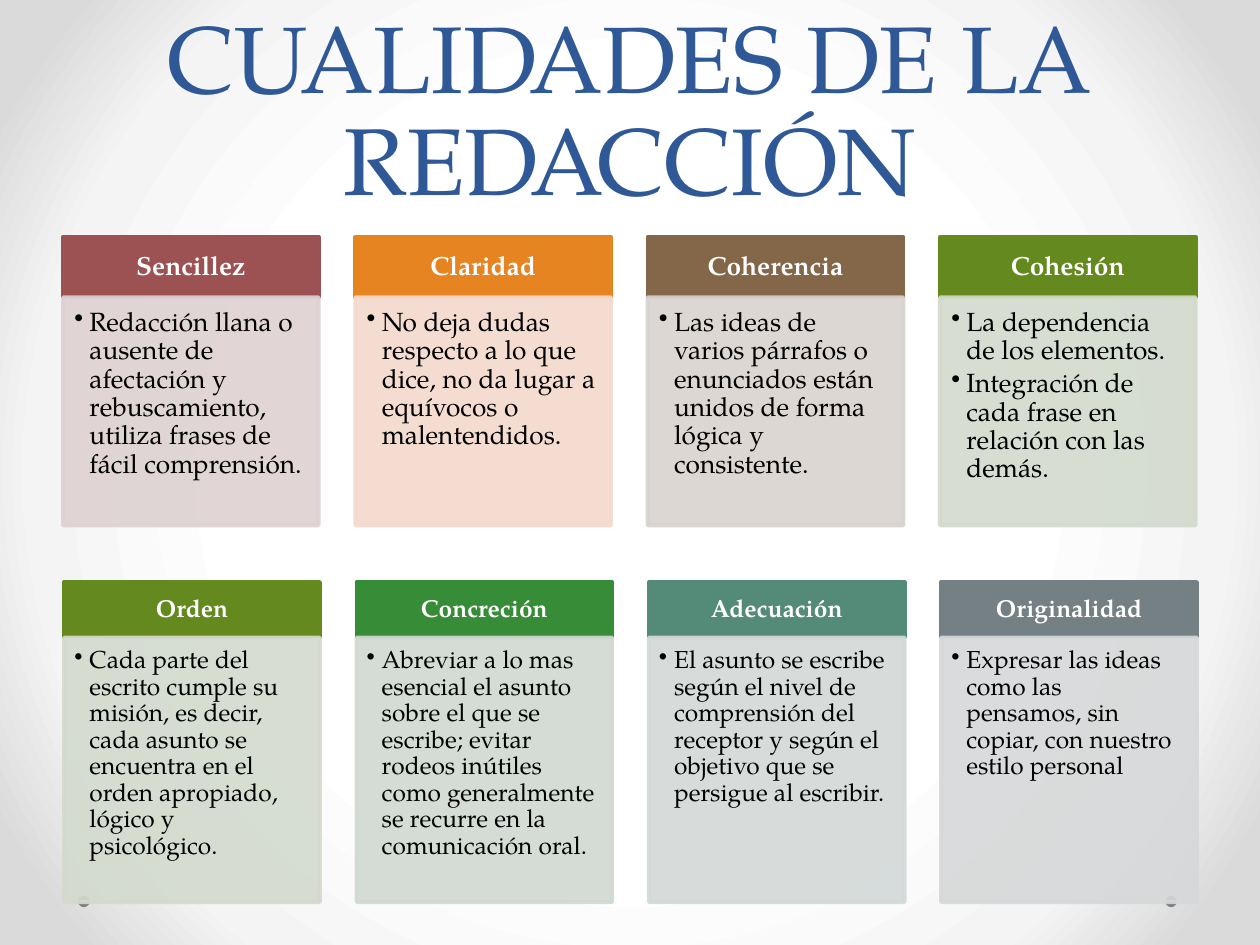
import pptx
import pptx.util
import pptx.oxml
import pptx.oxml.ns
import pptx.dml.color
import pptx.enum.shapes
import pptx.enum.text
from lxml import etree

Inches, Pt, qn = pptx.util.Inches, pptx.util.Pt, pptx.oxml.ns.qn
ALIGN, ANCHOR = pptx.enum.text.PP_ALIGN, pptx.enum.text.MSO_ANCHOR
SHAPE = pptx.enum.shapes.MSO_SHAPE

FONT = "TeX Gyre Pagella"
COLORS = {"title": "2F5897", "heading": "FFFFFF", "body": "000000", "dot": "808080"}
BACKGROUND = [(50, "FFFFFF"), (76, "F4F4F4"), (92, "DADADA")]
TITLE = "CUALIDADES DE LA REDACCIÓN"

# Each card: heading, heading colour, body colour, bullet texts
ROWS = [
    {"left": 0.5, "top": 1.88, "head": 0.48, "body": 1.81, "size": 15,
     "head_insets": (0.12, 0.07, 0.12, 0.07), "body_insets": (0.09, 0.09, 0.12, 0.13),
     "cards": [
         ("Sencillez", "9C5252", "DED1D1",
          ["Redacción llana o ausente de afectación y rebuscamiento, "
           "utiliza frases de fácil comprensión."]),
         ("Claridad", "E68422", "F5D9CD",
          ["No deja dudas respecto a lo que dice, no da lugar a equívocos o malentendidos."]),
         ("Coherencia", "846648", "D9D3CF",
          ["Las ideas de varios párrafos o enunciados están unidos de forma "
           "lógica y consistente."]),
         ("Cohesión", "63891F", "D3DACD",
          ["La dependencia de los elementos.",
           "Integración de cada frase en relación con las demás."]),
     ]},
    {"left": 0.51, "top": 4.62, "head": 0.44, "body": 2.1, "size": 14,
     "head_insets": (0.11, 0.06, 0.11, 0.06), "body_insets": (0.08, 0.08, 0.11, 0.12),
     "cards": [
         ("Orden", "63891F", "D3DACD",
          ["Cada parte del escrito cumple su misión, es decir, cada asunto se "
           "encuentra en el orden apropiado, lógico y psicológico."]),
         ("Concreción", "378D37", "D0D9D1",
          ["Abreviar a lo mas esencial el asunto sobre el que se escribe; evitar rodeos "
           "inútiles como generalmente se recurre en la comunicación oral."]),
         ("Adecuación", "538B78", "D3D9D8",
          ["El asunto se escribe según el nivel de comprensión del receptor y según "
           "el objetivo que se persigue al escribir."]),
         ("Originalidad", "758085", "D6D8D9",
          ["Expresar las ideas como las pensamos, sin copiar, con nuestro estilo personal"]),
     ]},
]
CARD_WIDTH, CARD_PITCH = 2.03, 2.32
INDENT = 0.12


def rgb(color):
    return pptx.dml.color.RGBColor.from_string(color)


def paint_background(page):
    """Fill the page with a gradient that spreads in circles from the centre."""
    page.background.fill.gradient()
    gradient = page.element.find(".//" + qn("p:bgPr")).find(qn("a:gradFill"))
    for child in list(gradient):
        gradient.remove(child)
    stops = etree.SubElement(gradient, qn("a:gsLst"))
    for position, color in BACKGROUND:
        stop = etree.SubElement(stops, qn("a:gs"), pos=str(position * 1000))
        etree.SubElement(stop, qn("a:srgbClr"), val=color)
    circle = etree.SubElement(gradient, qn("a:path"))
    circle.set("path", "circle")
    etree.SubElement(circle, qn("a:fillToRect"), l="50000", t="50000", r="50000", b="50000")


def add_block(page, kind, place, color):
    box = page.shapes.add_shape(kind, *map(Inches, place))
    box.shadow.inherit = False
    box.fill.solid()
    box.fill.fore_color.rgb = rgb(color)
    box.line.fill.background()
    return box


def add_panel(page, place, color, insets, anchor, opacity=100):
    """Add a card part with an outline of its own colour and room for text."""
    box = add_block(page, SHAPE.RECTANGLE, place, color)
    box.line.color.rgb = rgb(color)
    box.line.width = Pt(2.25)
    if opacity < 100:
        for tone in box.element.spPr.iter(qn("a:srgbClr")):
            etree.SubElement(tone, qn("a:alpha"), val=str(opacity * 1000))
    frame = box.text_frame
    frame.word_wrap = True
    frame.vertical_anchor = anchor
    (frame.margin_left, frame.margin_top,
     frame.margin_right, frame.margin_bottom) = map(Inches, insets)
    return frame


def style(para, size, color, align, spacing, bold=False):
    para.alignment = align
    para.line_spacing = spacing
    para.font.name = FONT
    para.font.size = Pt(size)
    para.font.bold = bold
    para.font.color.rgb = rgb(color)


def add_bullet(para):
    properties = para._p.get_or_add_pPr()
    properties.set("marL", str(Inches(INDENT)))
    properties.set("indent", str(-Inches(INDENT)))
    bullet = etree.Element(qn("a:buChar"), char="•")
    properties.find(qn("a:defRPr")).addprevious(bullet)


def add_card(page, row, left, card):
    heading, head_color, body_color, points = card
    frame = add_panel(page, (left, row["top"], CARD_WIDTH, row["head"]),
                      head_color, row["head_insets"], ANCHOR.MIDDLE)
    frame.text = heading
    style(frame.paragraphs[0], row["size"], COLORS["heading"], ALIGN.CENTER, 0.9, bold=True)

    frame = add_panel(page, (left, row["top"] + row["head"], CARD_WIDTH, row["body"]),
                      body_color, row["body_insets"], ANCHOR.TOP, opacity=90)
    frame.text = "\n".join(points)
    for para in frame.paragraphs:
        style(para, row["size"], COLORS["body"], ALIGN.LEFT, 0.9)
        para.space_after = Pt(2.6)
        add_bullet(para)


def main():
    deck = pptx.Presentation()
    deck.slide_width, deck.slide_height = Inches(10), Inches(7.5)
    page = deck.slides.add_slide(deck.slide_layouts[5])
    paint_background(page)

    title = page.shapes.title
    title.left, title.top, title.width, title.height = map(Inches, (0.5, 0, 9, 1.75))
    title.text_frame.text = TITLE
    title.text_frame.word_wrap = True
    title.text_frame.auto_size = pptx.enum.text.MSO_AUTO_SIZE.NONE
    title.text_frame.vertical_anchor = ANCHOR.BOTTOM
    style(title.text_frame.paragraphs[0], 54, COLORS["title"], ALIGN.CENTER, Pt(58))

    for left in (0.62, 9.25):
        add_block(page, SHAPE.OVAL, (left, 7.11, 0.09, 0.09), COLORS["dot"])

    for row in ROWS:
        for column, card in enumerate(row["cards"]):
            add_card(page, row, row["left"] + column * CARD_PITCH, card)

    deck.save("out.pptx")


if __name__ == "__main__":
    main()
